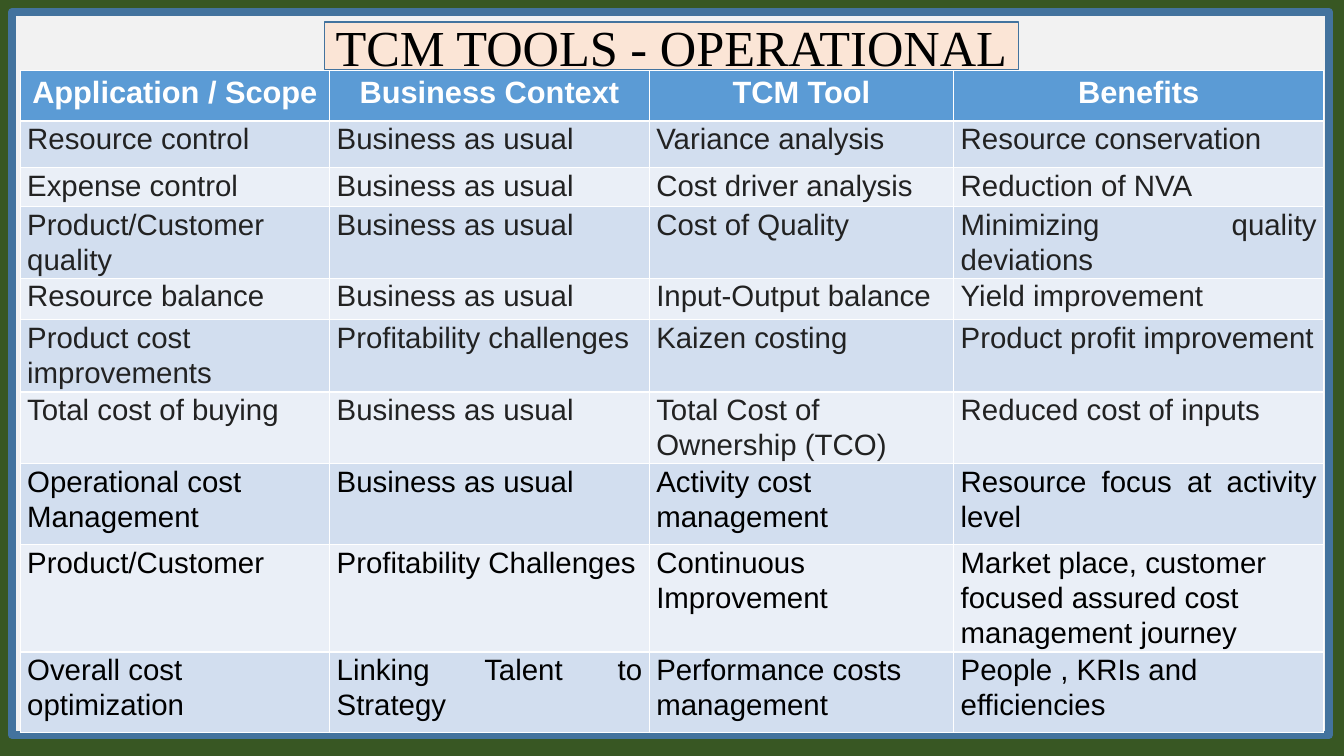
from dataclasses import dataclass

from pptx import Presentation
from pptx.dml.color import RGBColor
from pptx.enum.shapes import MSO_SHAPE as Shape
from pptx.enum.text import MSO_ANCHOR as Anchor, MSO_AUTO_SIZE as AutoSize, PP_ALIGN as Align
from pptx.util import Inches, Pt

TITLE = "TCM TOOLS - OPERATIONAL"
HEADERS = ("Application / Scope", "Business Context", "TCM Tool", "Benefits")
TOOLS = [
    ("Resource control", "Business as usual", "Variance analysis", "Resource conservation"),
    ("Expense control", "Business as usual", "Cost driver analysis", "Reduction of NVA"),
    ("Product/Customer quality", "Business as usual", "Cost of Quality", "Minimizing quality deviations"),
    ("Resource balance", "Business as usual", "Input-Output balance", "Yield improvement"),
    ("Product cost improvements", "Profitability challenges", "Kaizen costing", "Product profit improvement"),
    ("Total cost of buying", "Business as usual", "Total Cost of Ownership (TCO)", "Reduced cost of inputs"),
    ("Operational cost Management", "Business as usual", "Activity cost management",
     "Resource focus at activity level"),
    ("Product/Customer", "Profitability Challenges", "Continuous Improvement",
     "Market place, customer focused assured cost management journey"),
    ("Overall cost optimization", "Linking Talent to Strategy", "Performance costs management",
     "People , KRIs and efficiencies"),
]
ALIGNMENTS = ("JJJJ", "JJJJ", "JJJJ", "JJJJ", "LJJL", "JJLJ", "LJLJ", "JJLL", "LJLL")
ALIGN_CODES = {"J": Align.JUSTIFY, "L": Align.LEFT, "C": Align.CENTER}

SLIDE_SIZE = (13.33, 7.5)
PANEL_BOX = (0.12, 0.12, 13.06, 7.17)
TITLE_BOX = (3.22, 0.22, 6.88, 0.47)
TABLE_ORIGIN = (0.2, 0.7)
COLUMNS = (3.07, 3.17, 3.02, 3.67)
ROWS = (0.5, 0.46, 0.39, 0.71, 0.41, 0.72, 0.71, 0.8, 1.07, 0.8)
SIDE_INSET = 0.07
LINE_SPACING = 1.07
FIRST_BLACK_ROW = 7


@dataclass(frozen=True)
class Theme:
    background: str = "385723"
    panel: str = "F2F2F2"
    outline: str = "43739E"
    title_fill: str = "FBE5D6"
    header_fill: str = "5B9BD5"
    bands: tuple = ("EAEFF7", "D2DEEF")
    white: str = "FFFFFF"
    grey: str = "222222"
    black: str = "000000"
    title_font: str = "Times New Roman"
    table_font: str = "Arial"
    title_size: int = 36
    header_size: int = 22
    body_size: int = 21


THEME = Theme()


def paint(target, color):
    target.fill.solid()
    target.fill.fore_color.rgb = RGBColor.from_string(color)


def outline(shape, width):
    shape.line.color.rgb = RGBColor.from_string(THEME.outline)
    shape.line.width = Pt(width)


def write(frame, text, align, font, size, color, bold=False):
    frame.text = text
    para = frame.paragraphs[0]
    para.alignment = align
    span = para.runs[0].font
    span.name, span.size, span.bold = font, Pt(size), bold
    span.color.rgb = RGBColor.from_string(color)
    return para


def add_title(page):
    title = page.shapes.title
    title.left, title.top, title.width, title.height = map(Inches, TITLE_BOX)
    paint(title, THEME.title_fill)
    outline(title, 1)
    frame = title.text_frame
    frame.auto_size = AutoSize.NONE
    frame.vertical_anchor = Anchor.MIDDLE
    para = write(frame, TITLE, Align.CENTER, THEME.title_font, THEME.title_size, THEME.black)
    para.line_spacing = 1.0
    para.space_before = Pt(0)
    return title


def add_panel(page, title):
    panel = page.shapes.add_shape(Shape.RECTANGLE, *map(Inches, PANEL_BOX))
    panel.shadow.inherit = False
    paint(panel, THEME.panel)
    outline(panel, 6)
    title.element.addprevious(panel.element)


def add_tools(page):
    size = (sum(COLUMNS), sum(ROWS))
    grid = page.shapes.add_table(len(ROWS), len(COLUMNS), *map(Inches, TABLE_ORIGIN + size)).table
    for column, width in zip(grid.columns, COLUMNS):
        column.width = Inches(width)
    for row, height in zip(grid.rows, ROWS):
        row.height = Inches(height)

    for column, text in enumerate(HEADERS):
        cell = grid.cell(0, column)
        paint(cell, THEME.header_fill)
        write(cell.text_frame, text, Align.CENTER, THEME.table_font, THEME.header_size, THEME.white, True)

    for row, (texts, codes) in enumerate(zip(TOOLS, ALIGNMENTS), start=1):
        color = THEME.black if row >= FIRST_BLACK_ROW else THEME.grey
        for column, (text, code) in enumerate(zip(texts, codes)):
            cell = grid.cell(row, column)
            paint(cell, THEME.bands[row % 2])
            cell.margin_left = cell.margin_right = Inches(SIDE_INSET)
            cell.margin_top = cell.margin_bottom = 0
            para = write(cell.text_frame, text, ALIGN_CODES[code], THEME.table_font, THEME.body_size, color)
            para.line_spacing = LINE_SPACING


def main():
    deck = Presentation()
    deck.slide_width, deck.slide_height = map(Inches, SLIDE_SIZE)
    page = deck.slides.add_slide(deck.slide_layouts.get_by_name("Title Only"))
    paint(page.background, THEME.background)
    title = add_title(page)
    add_panel(page, title)
    add_tools(page)
    deck.save("out.pptx")


if __name__ == "__main__":
    main()
